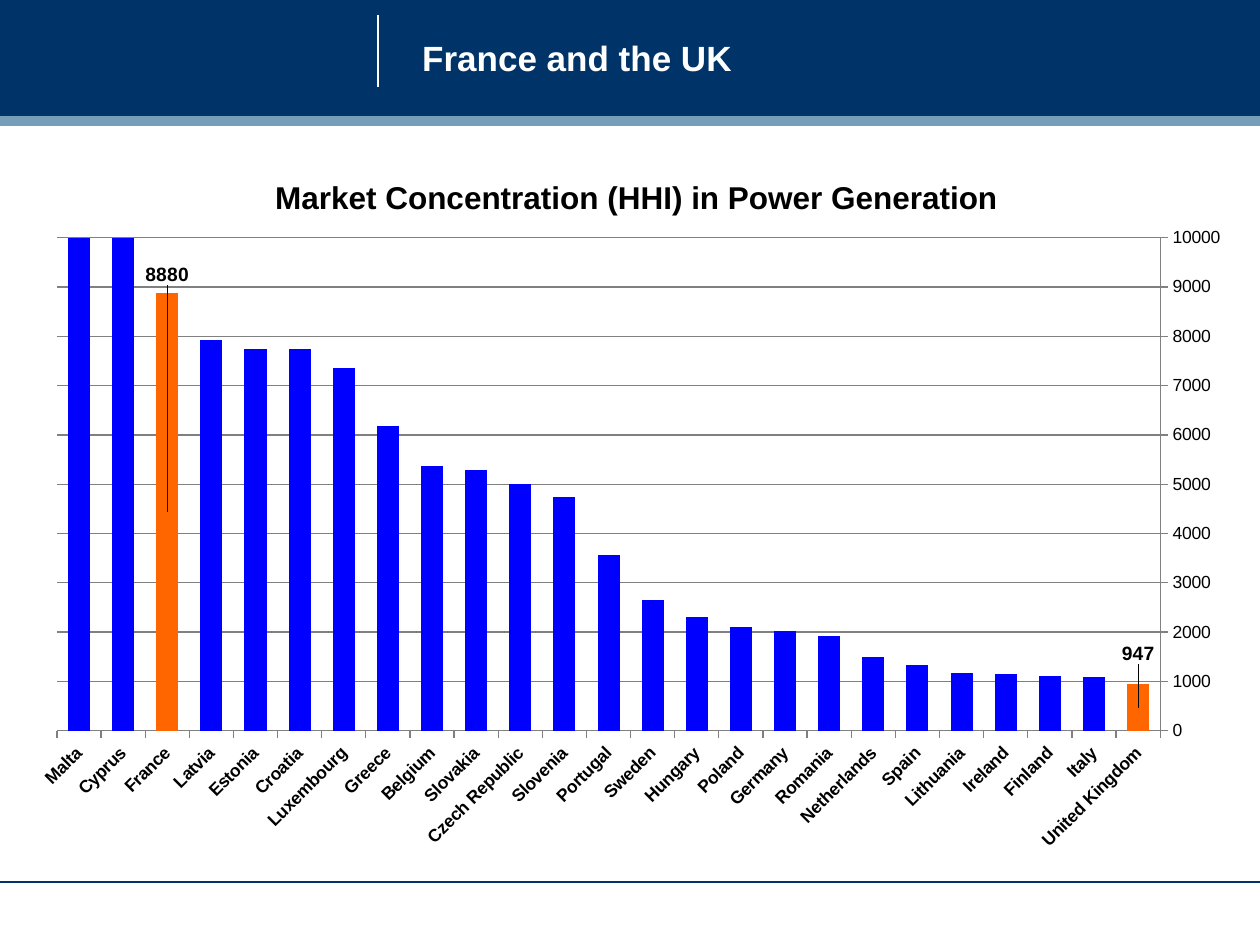
from dataclasses import dataclass

from lxml.etree import SubElement
from pptx import Presentation
from pptx.chart.data import CategoryChartData
from pptx.dml.color import RGBColor
from pptx.enum.chart import XL_CHART_TYPE as ChartType, XL_TICK_MARK as TickMark
from pptx.enum.shapes import MSO_CONNECTOR as Connector, MSO_SHAPE as Shape
from pptx.enum.text import MSO_ANCHOR as Anchor, PP_ALIGN as Align
from pptx.oxml import parse_xml
from pptx.oxml.ns import nsdecls, qn
from pptx.util import Cm, Pt

COLORS = {
    "navy": "003368", "steel": "759FB8", "white": "FFFFFF", "black": "000000",
    "blue": "0000FF", "orange": "FF6600", "grey": "808080",
}
FONT = "Arial"
WIDTH, HEIGHT = 25.4, 19.05

CONCENTRATION = {
    "United Kingdom": 947, "Italy": 1087, "Finland": 1102, "Ireland": 1150,
    "Lithuania": 1162, "Spain": 1329, "Netherlands": 1492, "Romania": 1914,
    "Germany": 2021, "Poland": 2096, "Hungary": 2296, "Sweden": 2650,
    "Portugal": 3567, "Slovenia": 4738, "Czech Republic": 5000,
    "Slovakia": 5280, "Belgium": 5380, "Greece": 6183, "Luxembourg": 7362,
    "Croatia": 7738, "Estonia": 7748, "Latvia": 7932, "France": 8880,
    "Cyprus": 10000, "Malta": 10000,
}
# Highlighted countries and how far their labels rise, as a share of chart height
LABEL_RISE = {"United Kingdom": 0.075, "France": 0.33}


@dataclass
class Band:
    top: float
    height: float
    color: str


@dataclass
class Rule:
    x1: float
    y1: float
    x2: float
    y2: float
    color: str


BANDS = [Band(0, 2.34, "navy"), Band(2.34, 0.2, "steel")]
RULES = [Rule(7.62, 0.3, 7.62, 1.75, "white"), Rule(0, 17.78, WIDTH, 17.78, "navy")]


def rgb(name: str) -> RGBColor:
    return RGBColor.from_string(COLORS[name])


def style_font(font, size: float, color: str = "black", bold: bool = False) -> None:
    font.name, font.size, font.bold = FONT, Pt(size), bold
    font.color.rgb = rgb(color)


def write_text(frame, text: str, **style) -> None:
    para = frame.paragraphs[0]
    span = para.add_run()
    span.text = text
    style_font(span.font, **style)


def draw_band(page, band: Band) -> None:
    box = page.shapes.add_shape(Shape.RECTANGLE, 0, Cm(band.top), Cm(WIDTH), Cm(band.height))
    box.shadow.inherit = False
    box.fill.solid()
    box.fill.fore_color.rgb = rgb(band.color)
    box.line.fill.background()


def draw_rule(page, rule: Rule) -> None:
    line = page.shapes.add_connector(
        Connector.STRAIGHT, Cm(rule.x1), Cm(rule.y1), Cm(rule.x2), Cm(rule.y2))
    line.line.color.rgb = rgb(rule.color)
    line.line.width = Pt(0.75)
    SubElement(line._element.spPr, qn("a:effectLst"))


def manual_layout(**values) -> object:
    items = "".join(f'<c:{key} val="{value}"/>' for key, value in values.items())
    return parse_xml(f'<c:layout {nsdecls("c")}><c:manualLayout>{items}'
                     "</c:manualLayout></c:layout>")


def style_axis(axis, bold: bool) -> None:
    axis.major_tick_mark = TickMark.OUTSIDE
    axis.minor_tick_mark = TickMark.NONE
    axis.format.line.color.rgb = rgb("grey")
    style_font(axis.tick_labels.font, 10, bold=bold)


def draw_chart(page) -> None:
    data = CategoryChartData()
    data.categories = list(CONCENTRATION)
    data.add_series("Series 1", list(CONCENTRATION.values()))
    chart = page.shapes.add_chart(
        ChartType.COLUMN_STACKED, Cm(0.33), Cm(2.92), Cm(24.77), Cm(14.53), data).chart
    chart.has_legend = False
    style_font(chart.font, 10)

    # Title and plot area
    chart.has_title = True
    write_text(chart.chart_title.text_frame,
               "Market Concentration (HHI) in Power Generation", size=18, bold=True)
    title = chart.chart_title._element
    for old in title.findall(qn("c:layout")):
        title.remove(old)
    title.find(qn("c:tx")).addnext(
        manual_layout(xMode="edge", yMode="edge", x=0.206, y=0.037))
    area = chart._chartSpace.chart.plotArea
    for old in area.findall(qn("c:layout")):
        area.remove(old)
    area.insert(0, manual_layout(layoutTarget="inner", xMode="edge", yMode="edge",
                                 x=0.033, y=0.129, w=0.898, h=0.684))

    # Axes: the reversed categories put the value axis on the right
    countries, values = chart.category_axis, chart.value_axis
    style_axis(countries, bold=True)
    style_axis(values, bold=False)
    countries.reverse_order = True
    countries._element.txPr.bodyPr.set("rot", "-2700000")
    values.minimum_scale, values.maximum_scale, values.major_unit = 0, 10000, 1000
    values.has_major_gridlines = True
    values.major_gridlines.format.line.color.rgb = rgb("grey")

    # Columns, with the highlighted ones labelled
    plot = chart.plots[0]
    plot.gap_width, plot.overlap, plot.vary_by_categories = 100, 100, False
    series = plot.series[0]
    series.format.fill.solid()
    series.format.fill.fore_color.rgb = rgb("blue")
    series.data_labels.show_value = False
    names = list(CONCENTRATION)
    for name, rise in LABEL_RISE.items():
        point = series.points[names.index(name)]
        point.format.fill.solid()
        point.format.fill.fore_color.rgb = rgb("orange")
        style_font(point.data_label.font, 11, bold=True)
    for label, rise in zip(series.data_labels._element.findall(qn("c:dLbl")),
                           LABEL_RISE.values()):
        label.find(qn("c:idx")).addnext(manual_layout(x=0, y=-rise))


def draw_title(page) -> None:
    box = page.shapes.title
    box.left, box.top, box.width, box.height = Cm(8.26), Cm(0.2), Cm(16.08), Cm(1.9)
    frame = box.text_frame
    frame.vertical_anchor = Anchor.MIDDLE
    frame.margin_left = frame.margin_right = Cm(0.25)
    frame.margin_top = frame.margin_bottom = Cm(0.25)
    write_text(frame, "France and the UK", size=20, color="white", bold=True)
    frame.paragraphs[0].alignment = Align.LEFT
    page.shapes._spTree.append(box._element)  # bring in front of the header band


def main() -> None:
    deck = Presentation()
    deck.slide_width, deck.slide_height = Cm(WIDTH), Cm(HEIGHT)
    page = deck.slides.add_slide(deck.slide_layouts[5])
    for band in BANDS:
        draw_band(page, band)
    for rule in RULES:
        draw_rule(page, rule)
    draw_chart(page)
    draw_title(page)
    deck.save("out.pptx")


if __name__ == "__main__":
    main()
